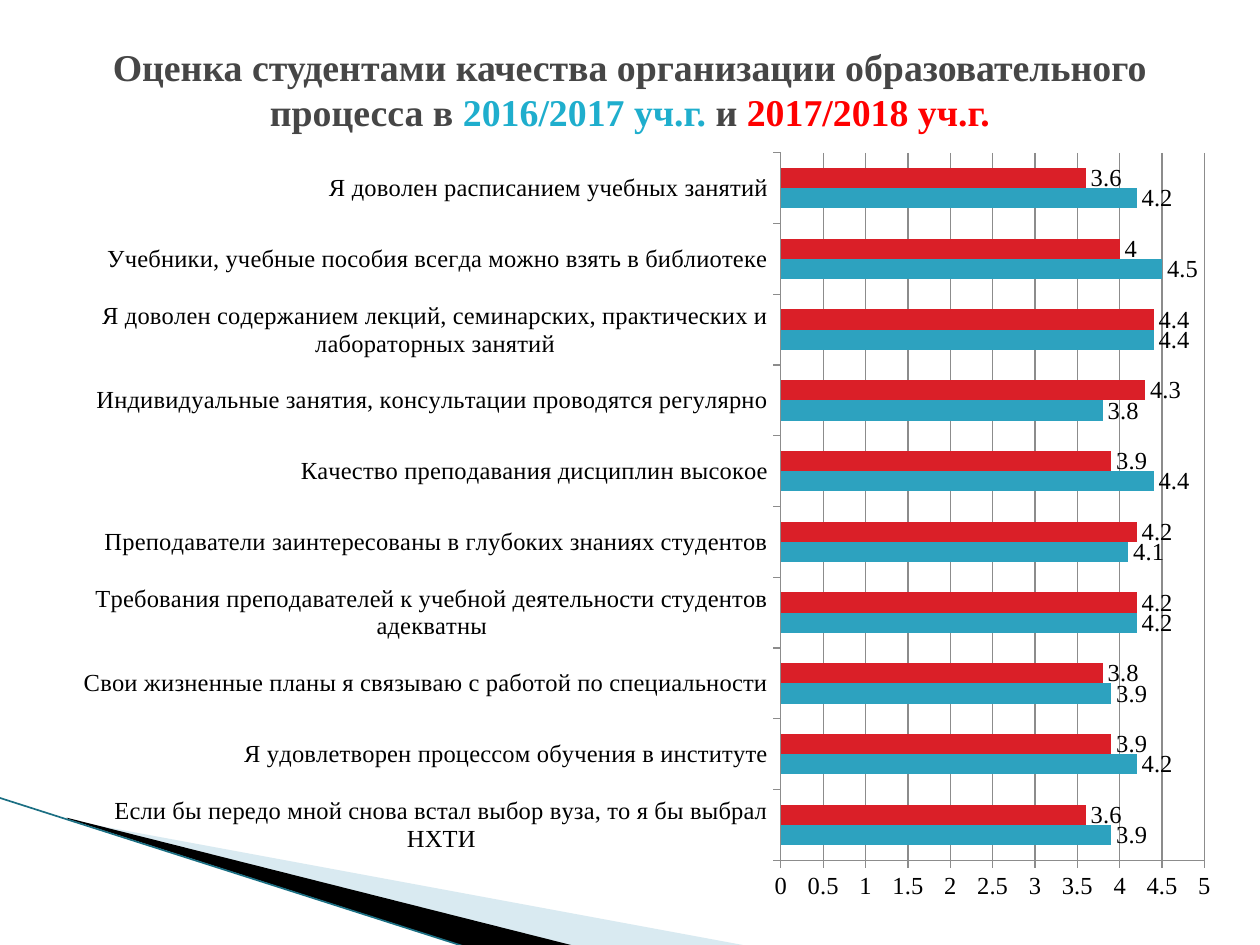
"""Build a slide comparing student ratings of teaching over two academic years."""
import pptx
import pptx.util
import pptx.chart.data
import pptx.dml.color
import pptx.enum.chart
import pptx.enum.shapes
import pptx.enum.text
import pptx.oxml
import pptx.oxml.ns

Inches = pptx.util.Inches
Pt = pptx.util.Pt
FONT = "Times New Roman"
HUES = {"gray": "464646", "cyan": "1FAECD", "red": "FF0000", "black": "000000",
        "pale": "A0CBDC", "edge": "1B6F83", "grid": "8C8C8C",
        "first": "2DA2BF", "second": "DA1F28"}


def hue(name):
    return pptx.dml.color.RGBColor.from_string(HUES[name])


def write(text, para, size=21.6, color="gray", bold=True):
    run = para.add_run()
    run.text = text
    run.font.name = FONT
    run.font.size = Pt(size)
    run.font.bold = bold
    run.font.color.rgb = hue(color)


deck = pptx.Presentation()
deck.slide_width, deck.slide_height = Inches(10), Inches(7.5)
slide = deck.slides.add_slide(deck.slide_layouts[5])
shapes = slide.shapes

wedges = [
    ("pale", 40, [(0.55, 6.51), (5.95, 7.51), (4.56, 7.51), (0.55, 6.5)]),
    ("black", 100, [(0.53, 6.49), (4.57, 7.51), (3.72, 7.52), (0.54, 6.5)]),
]
for color, alpha, points in wedges:
    spots = [(Inches(x), Inches(y)) for x, y in points]
    pen = shapes.build_freeform(*spots[0])
    pen.add_line_segments(spots[1:], close=True)
    wedge = pen.convert_to_shape()
    wedge.shadow.inherit = False
    wedge.fill.solid()
    wedge.fill.fore_color.rgb = hue(color)
    wedge.line.fill.background()
    if alpha < 100:
        tone = wedge.fill._xPr.find(".//" + pptx.oxml.ns.qn("a:srgbClr"))
        tone.append(pptx.oxml.parse_xml(
            f'<a:alpha {pptx.oxml.ns.nsdecls("a")} val="{alpha * 1000}"/>'))

edge = shapes.add_connector(pptx.enum.shapes.MSO_CONNECTOR.STRAIGHT,
                            Inches(-0.01), Inches(6.33), Inches(3.71), Inches(7.52))
edge.line.color.rgb = hue("edge")
edge.line.width = Pt(0.95)
edge._element.spPr.append(pptx.oxml.parse_xml(
    f'<a:effectLst {pptx.oxml.ns.nsdecls("a")}/>'))

title = shapes.title
title.left, title.top = Inches(0.5), Inches(0.16)
title.width, title.height = Inches(9), Inches(1.09)
frame = title.text_frame
frame.word_wrap = True
frame.auto_size = pptx.enum.text.MSO_AUTO_SIZE.NONE
frame.vertical_anchor = pptx.enum.text.MSO_ANCHOR.MIDDLE
para = frame.paragraphs[0]
para.alignment = pptx.enum.text.PP_ALIGN.CENTER
write("Оценка студентами качества организации образовательного процесса в ", para)
write("2016/2017 уч.г. ", para, color="cyan")
write("и ", para)
write("2017/2018 уч.г.", para, color="red")

rows = [
    ("Если бы передо мной снова встал выбор вуза, то я бы выбрал НХТИ", 3.9, 3.6),
    ("Я удовлетворен процессом обучения в институте", 4.2, 3.9),
    ("Свои жизненные планы я связываю с работой по специальности", 3.9, 3.8),
    ("Требования преподавателей к учебной деятельности студентов адекватны", 4.2, 4.2),
    ("Преподаватели заинтересованы в глубоких знаниях студентов", 4.1, 4.2),
    ("Качество преподавания дисциплин высокое", 4.4, 3.9),
    ("Индивидуальные занятия, консультации проводятся регулярно", 3.8, 4.3),
    ("Я доволен содержанием лекций, семинарских, практических и лабораторных занятий",
     4.4, 4.4),
    ("Учебники, учебные пособия всегда можно взять в библиотеке", 4.5, 4),
    ("Я доволен расписанием учебных занятий", 4.2, 3.6),
]
names, before, after = zip(*rows)
data = pptx.chart.data.CategoryChartData()
data.categories = names
data.add_series("Series 1", before)
data.add_series("Series 2", after)
chart = shapes.add_chart(pptx.enum.chart.XL_CHART_TYPE.BAR_CLUSTERED, Inches(0.5),
                         Inches(1.09), Inches(9.34), Inches(6.17), data).chart
chart.has_legend = False
chart.has_title = False
chart.font.name = FONT
chart.font.size = Pt(14)
chart.font.color.rgb = hue("black")

plot = chart.plots[0]
plot.vary_by_categories = False
plot.gap_width = 150
plot.overlap = 0
for series, color in zip(plot.series, ("first", "second")):
    series.format.fill.solid()
    series.format.fill.fore_color.rgb = hue(color)
    series.invert_if_negative = False
    labels = series.data_labels
    labels.show_value = True
    labels.position = pptx.enum.chart.XL_LABEL_POSITION.OUTSIDE_END

scale = chart.value_axis
scale.minimum_scale, scale.maximum_scale, scale.major_unit = 0, 5, 0.5
scale.has_major_gridlines = True
scale.major_gridlines.format.line.color.rgb = hue("grid")
for axis in (scale, chart.category_axis):
    axis.format.line.color.rgb = hue("grid")
    axis.major_tick_mark = pptx.enum.chart.XL_TICK_MARK.OUTSIDE
    axis.minor_tick_mark = pptx.enum.chart.XL_TICK_MARK.NONE

area = chart._chartSpace.chart.plotArea
for old in area.findall(pptx.oxml.ns.qn("c:layout")):
    area.remove(old)
sides = "".join(f'<c:{side} val="{size}"/>' for side, size in
                (("x", 0.61), ("y", 0.02), ("w", 0.36), ("h", 0.91)))
area.insert(0, pptx.oxml.parse_xml(
    f'<c:layout {pptx.oxml.ns.nsdecls("c")}><c:manualLayout>'
    '<c:layoutTarget val="inner"/><c:xMode val="edge"/><c:yMode val="edge"/>'
    f'{sides}</c:manualLayout></c:layout>'))

deck.save("out.pptx")
